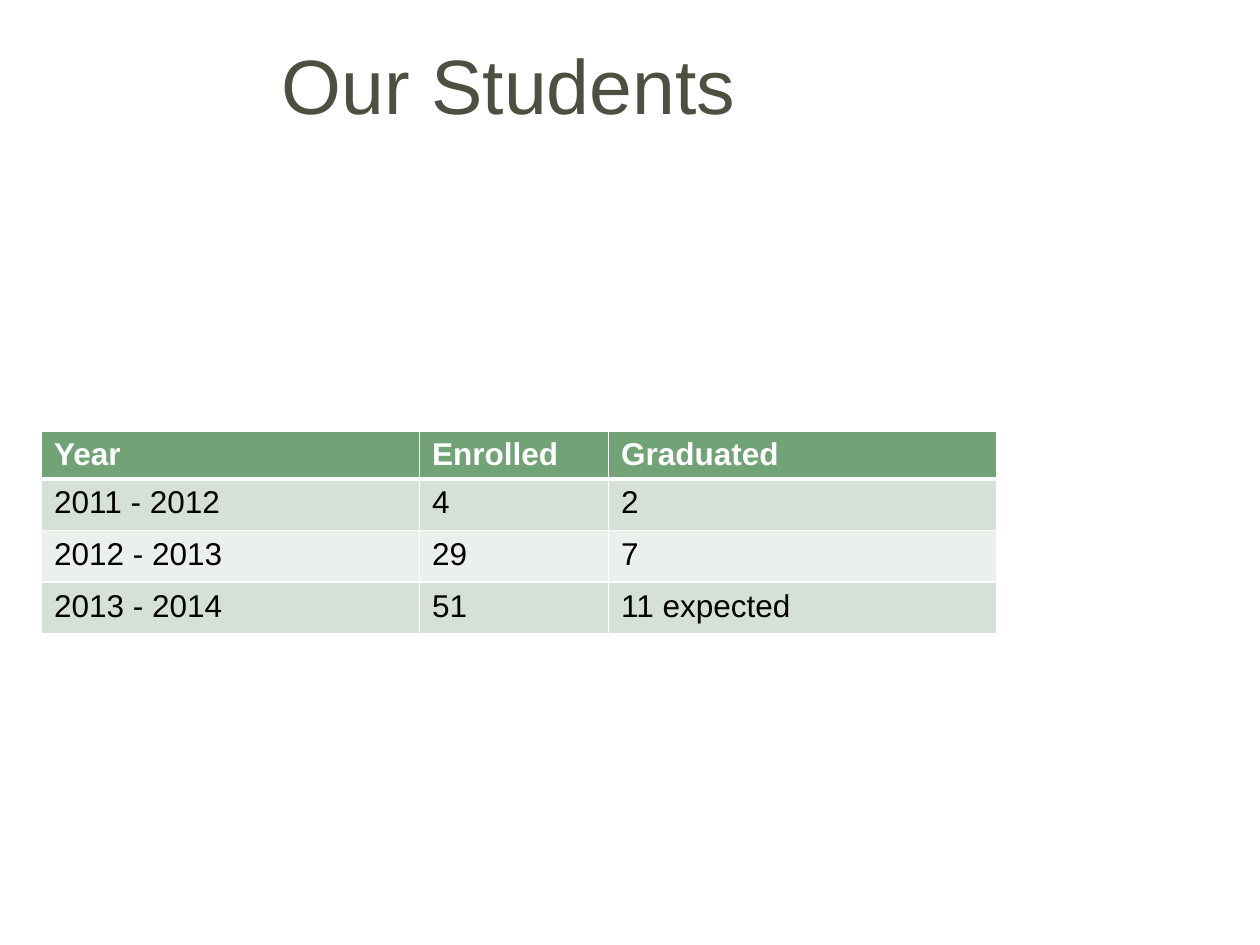
from lxml import etree
from pptx import Presentation
from pptx.dml.color import RGBColor
from pptx.enum.text import MSO_ANCHOR, PP_ALIGN
from pptx.oxml.ns import qn
from pptx.util import Inches, Pt

CENTER, LEFT = PP_ALIGN.CENTER, PP_ALIGN.LEFT
MIDDLE, TOP = MSO_ANCHOR.MIDDLE, MSO_ANCHOR.TOP

TITLE = "Our Students"
ROWS = [
    ("Year", "Enrolled", "Graduated"),
    ("2011 - 2012", "4", "2"),
    ("2012 - 2013", "29", "7"),
    ("2013 - 2014", "51", "11 expected"),
]
COLUMN_WIDTHS = [3, 1.5, 3.08]
ROW_HEIGHTS = [0.38, 0.41, 0.41, 0.41]
COLORS = {
    "title": "4D5040",
    "header": "72A376",
    "odd row": "D5E0D6",
    "even row": "EBF0EC",
    "white": "FFFFFF",
    "black": "000000",
}


def color(name):
    return RGBColor.from_string(COLORS[name])


def write(frame, text, size=18, fill="black", bold=False, align=LEFT):
    para = frame.paragraphs[0]
    para.alignment = align
    span = para.add_run()
    span.text = text
    span.font.name = "Arial"
    span.font.size = Pt(size)
    span.font.bold = bold
    span.font.color.rgb = color(fill)


def set_borders(cell, **widths):
    """Draw white cell borders; widths in points by side (L, R, T, B)."""
    properties = cell._tc.get_or_add_tcPr()
    for position, (side, width) in enumerate(widths.items()):
        line = etree.Element(qn(f"a:ln{side}"), w=str(Pt(width)))
        solid = etree.SubElement(line, qn("a:solidFill"))
        etree.SubElement(solid, qn("a:srgbClr"), val=COLORS["white"])
        properties.insert(position, line)


def add_title(page):
    title = page.shapes.title
    title.left, title.top = Inches(0.5), Inches(0.04)
    title.width, title.height = Inches(7.08), Inches(1.25)
    title.text_frame.vertical_anchor = MIDDLE
    write(title.text_frame, TITLE, size=44, fill="title", align=CENTER)


def add_student_table(page):
    table = page.shapes.add_table(
        len(ROWS), len(COLUMN_WIDTHS), Inches(0.33), Inches(3.42),
        Inches(sum(COLUMN_WIDTHS)), Inches(sum(ROW_HEIGHTS))).table
    for column, width in zip(table.columns, COLUMN_WIDTHS):
        column.width = Inches(width)
    for index, (row, height, texts) in enumerate(zip(table.rows, ROW_HEIGHTS, ROWS)):
        row.height = Inches(height)
        header = index == 0
        band = "header" if header else "odd row" if index % 2 else "even row"
        for cell, text in zip(row.cells, texts):
            cell.vertical_anchor = TOP
            cell.fill.solid()
            cell.fill.fore_color.rgb = color(band)
            write(cell.text_frame, text, bold=header,
                  fill="white" if header else "black")
            set_borders(cell, L=1, R=1, T=3 if index == 1 else 1,
                        B=3 if header else 1)


def main():
    deck = Presentation()
    deck.slide_width, deck.slide_height = Inches(10), Inches(7.5)
    page = deck.slides.add_slide(deck.slide_layouts[5])
    page.background.fill.solid()
    page.background.fill.fore_color.rgb = color("white")
    add_title(page)
    add_student_table(page)
    deck.save("out.pptx")


if __name__ == "__main__":
    main()
